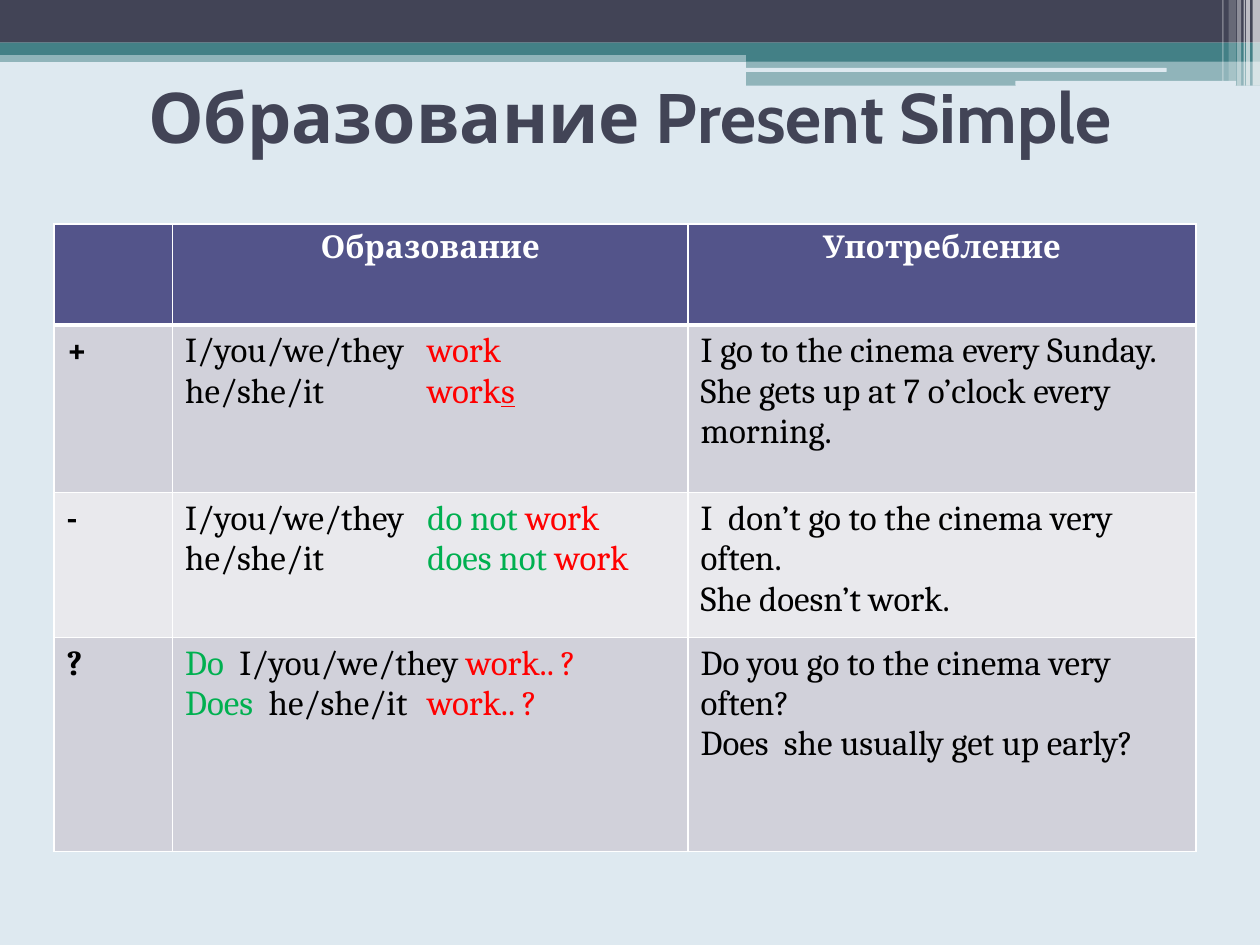
from lxml.etree import SubElement as Sub
from pptx import Presentation
from pptx.dml.color import RGBColor as RGB
from pptx.enum.shapes import MSO_SHAPE as Kind
from pptx.enum.text import MSO_ANCHOR as Anchor, PP_ALIGN as Align
from pptx.oxml.ns import qn
from pptx.util import Cm, Pt

DARK = RGB(0x42, 0x44, 0x56)
TEAL = RGB(0x43, 0x80, 0x86)
PALE = RGB(0xDE, 0xE9, 0xF0)
WHITE = RGB(0xFF, 0xFF, 0xFF)
BLACK = RGB(0x00, 0x00, 0x00)
RED = RGB(0xFF, 0x00, 0x00)
GREEN = RGB(0x00, 0xB0, 0x50)
HEAD = RGB(0x53, 0x54, 0x8A)
ODD = RGB(0xD1, 0xD1, 0xDA)
EVEN = RGB(0xE9, 0xE9, 0xED)

WIDE, TALL = 25.4, 19.05
RECT, ROUND = Kind.RECTANGLE, Kind.ROUNDED_RECTANGLE

# Top bands: left, top, width, height, kind, colour, opacity in %
BANDS = [
    (0, 1.02, WIDE, 0.23, RECT, TEAL, 50),
    (0, 0, WIDE, 0.86, RECT, DARK, 100),
    (0, 0.86, WIDE, 0.25, RECT, TEAL, 100),
    (15.04, 0.99, 10.36, 0.25, RECT, TEAL, 100),
    (15.04, 1.22, 10.36, 0.51, RECT, TEAL, 50),
    (15.01, 1.37, 8.51, 0.08, ROUND, PALE, 100),
    (20.47, 1.63, 4.45, 0.1, ROUND, PALE, 100),
]
# Corner stripes: left, width, height, opacity in %
STRIPES = [
    (25.25, 0.15, 1.73, 65),
    (25.12, 0.08, 1.73, 65),
    (25.07, 0.03, 1.73, 60),
    (24.94, 0.08, 1.73, 40),
    (24.77, 0.15, 1.63, 20),
    (24.64, 0.03, 1.63, 30),
]

COLS = [2.39, 10.39, 10.24]
ROWS = [2.03, 3.38, 2.92, 4.32]
TAB = 4.88  # where the verb column starts inside a cell

# Text formats
TITLE = {"name": "Cabin", "size": Pt(40), "bold": True}
LABEL = {"name": "Cambria", "size": Pt(18), "bold": True}
MARK = {"name": "Cambria", "size": Pt(20), "bold": True}
BODY = {"name": "Cambria", "size": Pt(20), "bold": False}
LINED = {**BODY, "underline": True}

# Rows: sign, form lines made of (text, colour, format), example lines
FORMS = [
    ("+",
     [[("I/you/we/they\t", BLACK, BODY), ("work", RED, BODY)],
      [("he/she/it\t", BLACK, BODY), ("work", RED, BODY), ("s", RED, LINED)]],
     ["I go to the cinema every Sunday.",
      "She gets up at 7 o’clock every morning."]),
    ("-",
     [[("I/you/we/they\t", BLACK, BODY), ("do not ", GREEN, BODY), ("work", RED, BODY)],
      [("he/she/it\t", BLACK, BODY), ("does not ", GREEN, BODY), ("work", RED, BODY)]],
     ["I  don’t go to the cinema very often.",
      "She doesn’t work."]),
    ("?",
     [[("Do", GREEN, BODY), ("  I/you/we/they ", BLACK, BODY), ("work.. ?", RED, BODY)],
      [("Does  ", GREEN, BODY), ("he/she/it\t", BLACK, BODY), ("work.. ?", RED, BODY)]],
     ["Do you go to the cinema very often?",
      "Does  she usually get up early?"]),
]


def add_bar(slide, left, top, width, height, kind, color, alpha):
    bar = slide.shapes.add_shape(kind, Cm(left), Cm(top), Cm(width), Cm(height))
    bar.shadow.inherit = False
    bar.line.fill.background()
    bar.fill.solid()
    bar.fill.fore_color.rgb = color
    if alpha < 100:
        tone = bar.fill._xPr.find(qn("a:solidFill"))[0]
        Sub(tone, qn("a:alpha"), val=str(alpha * 1000))


def write(frame, lines, align=Align.LEFT):
    """Fill a text frame with lines of (text, colour, format) runs."""
    for i, line in enumerate(lines):
        para = frame.add_paragraph() if i else frame.paragraphs[0]
        para.alignment = align
        if any("\t" in text for text, _, _ in line):
            tabs = Sub(para._p.get_or_add_pPr(), qn("a:tabLst"))
            Sub(tabs, qn("a:tab"), pos=str(Cm(TAB)), algn="l")
        for text, color, style in line:
            run = para.add_run()
            run.text = text
            for key, value in style.items():
                setattr(run.font, key, value)
            run.font.color.rgb = color


def add_title(slide, text):
    box = slide.shapes.add_textbox(Cm(1.27), Cm(0.53), Cm(22.86), Cm(3.61))
    box.text_frame.word_wrap = True
    box.text_frame.vertical_anchor = Anchor.MIDDLE
    write(box.text_frame, [[(text, DARK, TITLE)]], Align.CENTER)


def dress(cell, color, base=1):
    """Set white borders first, then the fill, as the schema orders them."""
    props = cell._tc.get_or_add_tcPr()
    for side, width in {"L": 1, "R": 1, "T": 1, "B": base}.items():
        edge = Sub(props, qn(f"a:ln{side}"), w=str(Pt(width)))
        Sub(Sub(edge, qn("a:solidFill")), qn("a:srgbClr"), val=str(WHITE))
    cell.fill.solid()
    cell.fill.fore_color.rgb = color


def add_grid(slide):
    grid = slide.shapes.add_table(
        len(ROWS), len(COLS), Cm(1.09), Cm(4.52), Cm(sum(COLS)), Cm(sum(ROWS))
    ).table
    for col, width in zip(grid.columns, COLS):
        col.width = Cm(width)
    for row, height in zip(grid.rows, ROWS):
        row.height = Cm(height)

    # Header row
    for cell, text in zip(grid.rows[0].cells, ["", "Образование", "Употребление"]):
        dress(cell, HEAD, 3)
        if text:
            write(cell.text_frame, [[(text, WHITE, LABEL)]], Align.CENTER)

    # Sign, form and use
    for r, (sign, form, uses) in enumerate(FORMS, 1):
        parts = [
            [[(sign, BLACK, MARK)]],
            form,
            [[(use, BLACK, BODY)] for use in uses],
        ]
        for cell, lines in zip(grid.rows[r].cells, parts):
            dress(cell, ODD if r % 2 else EVEN)
            write(cell.text_frame, lines)


def main():
    deck = Presentation()
    deck.slide_width, deck.slide_height = Cm(WIDE), Cm(TALL)
    slide = deck.slides.add_slide(deck.slide_layouts[6])
    slide.background.fill.solid()
    slide.background.fill.fore_color.rgb = PALE

    # Decoration
    for band in BANDS:
        add_bar(slide, *band)
    for left, width, height, alpha in STRIPES:
        add_bar(slide, left, 0, width, height, RECT, WHITE, alpha)

    # Content
    add_title(slide, "Образование Present Simple")
    add_grid(slide)
    deck.save("out.pptx")


if __name__ == "__main__":
    main()
